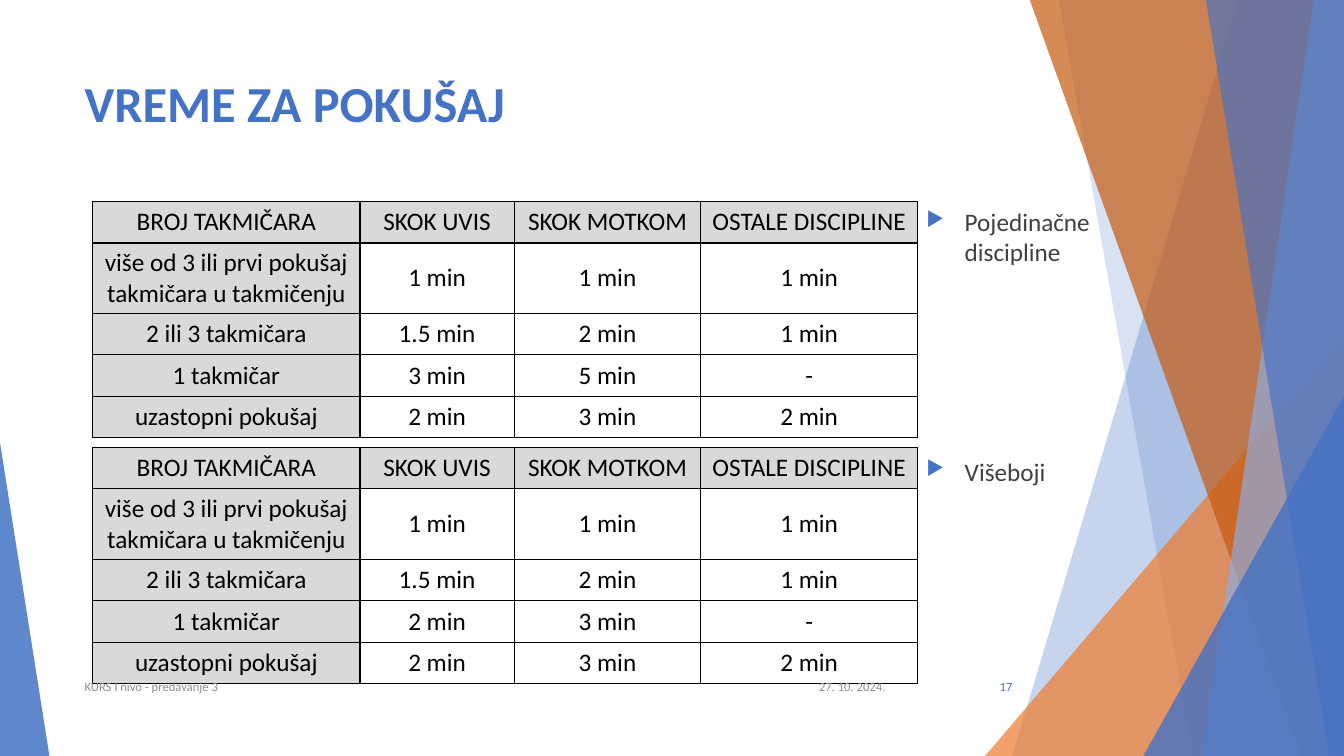
from lxml import etree
from pptx import Presentation
from pptx.dml.color import RGBColor
from pptx.enum.shapes import MSO_CONNECTOR, MSO_SHAPE
from pptx.enum.text import MSO_ANCHOR, PP_ALIGN
from pptx.oxml.ns import qn
from pptx.util import Inches, Pt

LEFT, CENTER, RIGHT = PP_ALIGN.LEFT, PP_ALIGN.CENTER, PP_ALIGN.RIGHT
TOP, MIDDLE = MSO_ANCHOR.TOP, MSO_ANCHOR.MIDDLE
STRAIGHT = MSO_CONNECTOR.STRAIGHT
TRIANGLE = MSO_SHAPE.ISOSCELES_TRIANGLE

FONT = "Calibri"
COLORS = {
    "blue": "4472C4", "light_blue": "8FAADC", "orange": "ED7D31",
    "rust": "C55A11", "white": "FFFFFF", "black": "000000",
    "header": "D9D9D9", "body": "404040", "footer": "8C8C8C",
}
WIDTH, HEIGHT, BLEED = 13.33, 7.5, -0.01

RAYS = [(10.25, 0, 11.58, HEIGHT), (WIDTH, 4.03, 8.12, HEIGHT)]
BACK_BANDS = [(12.28, 10.04, "blue", 30), (10.5, 11.83, "blue", 20)]
FRONT_BANDS = [
    (10.21, 12.91, "rust", 70),
    (13.03, 11.92, "light_blue", 70),
    (11.96, 13.18, "blue", 65),
]
BACK_CORNERS = [(9.77, 3.56, 4.17, 1, "orange", 72)]
FRONT_CORNERS = [(11.34, 1.99, 3.57, 1, "blue", 80), (0, 0.49, 3.11, 0, "blue", 85)]

COLUMN_WIDTHS = [2.65, 1.53, 1.85, 2.15]
ROW_HEIGHTS = [0.41, 0.7, 0.41, 0.41, 0.41]
HEADINGS = ["BROJ TAKMIČARA", "SKOK UVIS", "SKOK MOTKOM", "OSTALE DISCIPLINE"]
SHARED_START = [
    HEADINGS,
    ["više od 3 ili prvi pokušaj takmičara u takmičenju", "1 min", "1 min", "1 min"],
    ["2 ili 3 takmičara", "1.5 min", "2 min", "1 min"],
]
SHARED_END = [["uzastopni pokušaj", "2 min", "3 min", "2 min"]]
SINGLE_ATHLETE = [
    (2, ["1 takmičar", "3 min", "5 min", "-"]),
    (4.44, ["1 takmičar", "2 min", "3 min", "-"]),
]


def rgb(color):
    return RGBColor.from_string(COLORS[color])


def paint(shape, color, opacity):
    shape.shadow.inherit = False
    shape.line.fill.background()
    shape.fill.solid()
    shape.fill.fore_color.rgb = rgb(color)
    tint = shape.fill._xPr.find(qn("a:solidFill"))[0]
    etree.SubElement(tint, qn("a:alpha"), val=str(opacity * 1000))


def add_ray(slide, x1, y1, x2, y2):
    ray = slide.shapes.add_connector(
        STRAIGHT, Inches(x1), Inches(y1), Inches(x2), Inches(y2))
    ray.line.color.rgb = rgb("white")
    ray.line.width = Pt(0.75)
    etree.SubElement(ray._element.spPr, qn("a:effectLst"))


def add_band(slide, top_x, bottom_x, color, opacity):
    outline = slide.shapes.build_freeform(Inches(top_x), Inches(BLEED))
    corners = [(WIDTH, BLEED), (WIDTH, HEIGHT), (bottom_x, HEIGHT)]
    outline.add_line_segments([(Inches(x), Inches(y)) for x, y in corners])
    paint(outline.convert_to_shape(), color, opacity)


def add_corner(slide, left, width, height, apex, color, opacity):
    corner = slide.shapes.add_shape(
        TRIANGLE, Inches(left), Inches(HEIGHT - height), Inches(width), Inches(height))
    corner.adjustments[0] = apex
    paint(corner, color, opacity)


def style(paragraph, size, color, align=LEFT, bold=False):
    paragraph.alignment = align
    for name, value in {"name": FONT, "size": Pt(size), "bold": bold}.items():
        setattr(paragraph.font, name, value)
    paragraph.font.color.rgb = rgb(color)


def add_frame(slide, left, top, width, height, anchor):
    frame = slide.shapes.add_textbox(
        Inches(left), Inches(top), Inches(width), Inches(height)).text_frame
    frame.word_wrap = True
    frame.vertical_anchor = anchor
    return frame


def add_text(slide, box, text, size, color, align=LEFT, anchor=MIDDLE, bold=False):
    paragraph = add_frame(slide, *box, anchor).paragraphs[0]
    paragraph.text = text
    style(paragraph, size, color, align, bold)


def add_bullet(paragraph):
    props = paragraph._p.get_or_add_pPr()
    props.set("marL", str(Inches(0.38)))
    props.set("indent", str(-Inches(0.38)))
    tint = etree.SubElement(props, qn("a:buClr"))
    etree.SubElement(tint, qn("a:srgbClr"), val=COLORS["blue"])
    etree.SubElement(props, qn("a:buSzPct"), val="80000")
    etree.SubElement(props, qn("a:buChar"), char="▶")


def add_event_types(slide):
    frame = add_frame(slide, 9.09, 2, 2.37, 4.76, TOP)
    frame.text = "Pojedinačne discipline\nVišeboji"
    for paragraph in frame.paragraphs:
        add_bullet(paragraph)
        style(paragraph, 18, "body")
    frame.paragraphs[1].space_before = Pt(135)


def add_borders(cell):
    props = cell._tc.get_or_add_tcPr()
    for side in ("lnL", "lnR", "lnT", "lnB"):
        border = etree.SubElement(props, qn(f"a:{side}"), w=str(Pt(1)))
        fill = etree.SubElement(border, qn("a:solidFill"))
        etree.SubElement(fill, qn("a:srgbClr"), val=COLORS["black"])


def add_time_table(slide, top, rows):
    table = slide.shapes.add_table(
        len(rows), len(HEADINGS), Inches(0.92), Inches(top),
        Inches(sum(COLUMN_WIDTHS)), Inches(sum(ROW_HEIGHTS))).table
    for column, width in zip(table.columns, COLUMN_WIDTHS):
        column.width = Inches(width)
    for row, height in zip(table.rows, ROW_HEIGHTS):
        row.height = Inches(height)
    for r, texts in enumerate(rows):
        for c, text in enumerate(texts):
            cell = table.cell(r, c)
            cell.text = text
            cell.vertical_anchor = MIDDLE
            style(cell.text_frame.paragraphs[0], 18, "black", CENTER)
            add_borders(cell)
            if r == 0 or c == 0:
                cell.fill.solid()
                cell.fill.fore_color.rgb = rgb("header")
            else:
                cell.fill.background()


def add_backdrop(slide):
    for ray in RAYS:
        add_ray(slide, *ray)
    for bands, corners in ((BACK_BANDS, BACK_CORNERS), (FRONT_BANDS, FRONT_CORNERS)):
        for band in bands:
            add_band(slide, *band)
        for corner in corners:
            add_corner(slide, *corner)


def main():
    deck = Presentation()
    deck.slide_width, deck.slide_height = Inches(WIDTH), Inches(HEIGHT)
    slide = deck.slides.add_slide(deck.slide_layouts[6])
    add_backdrop(slide)
    add_text(slide, (0.74, 0.67, 9.4, 1.44), "VREME ZA POKUŠAJ", 36, "blue",
             anchor=TOP, bold=True)
    add_event_types(slide)
    for top, single_row in SINGLE_ATHLETE:
        add_time_table(slide, top, SHARED_START + [single_row] + SHARED_END)
    add_text(slide, (7.88, 6.61, 1, 0.4), "27. 10. 2024.", 9, "footer", RIGHT)
    add_text(slide, (0.74, 6.61, 6.89, 0.4), "KURS I nivo - predavanje 3", 9, "footer")
    add_text(slide, (9.39, 6.61, 0.75, 0.4), "17", 9, "blue", RIGHT)
    deck.save("out.pptx")


if __name__ == "__main__":
    main()
